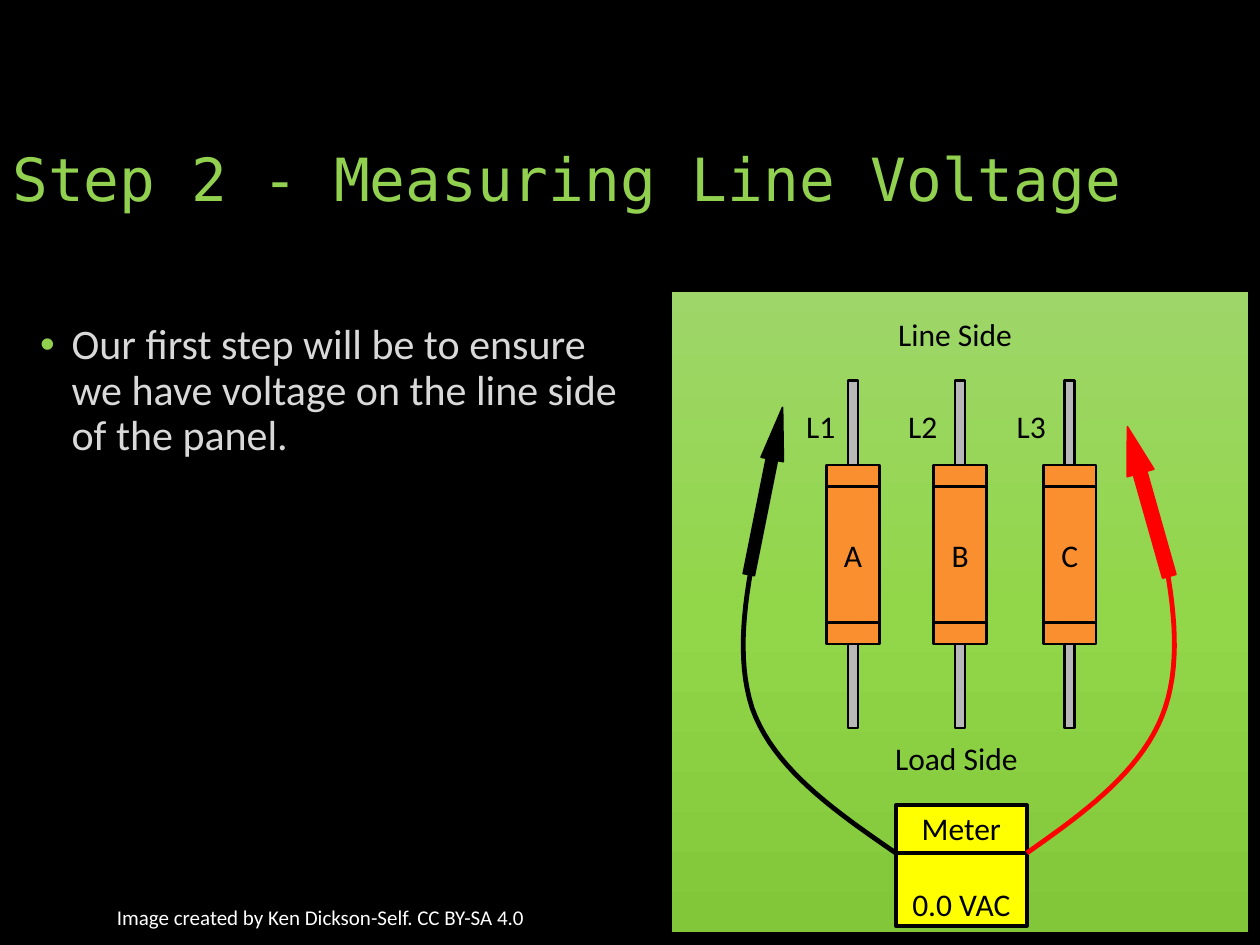
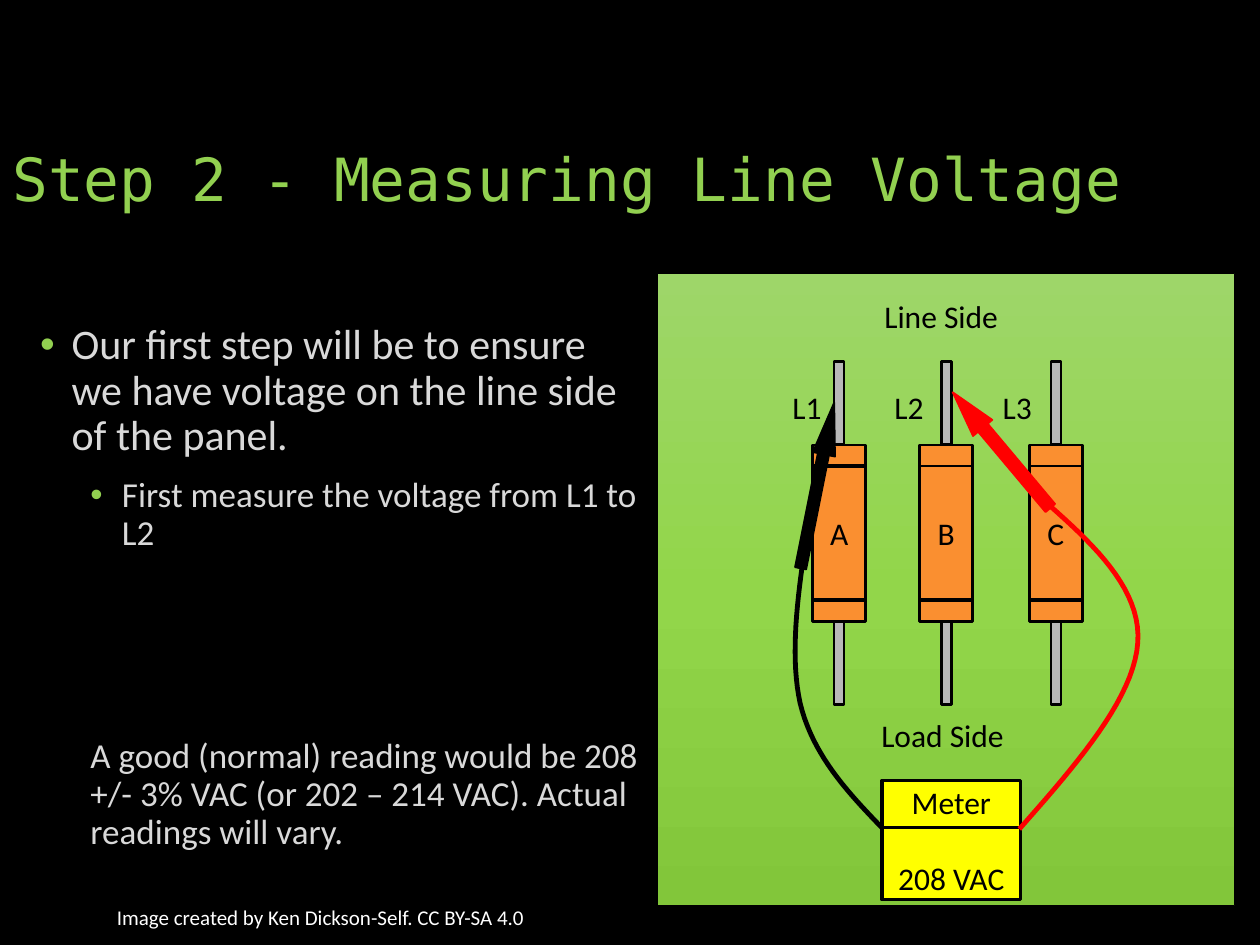
import pptx
import pptx.util
import pptx.dml.color
import pptx.enum.shapes
import pptx.enum.text
import pptx.oxml.ns
import copy
from lxml import etree

Inches, Pt = pptx.util.Inches, pptx.util.Pt
ALIGN, ANCHOR = pptx.enum.text.PP_ALIGN, pptx.enum.text.MSO_ANCHOR
SHAPE = pptx.enum.shapes.MSO_SHAPE
qn = pptx.oxml.ns.qn

BLACK, WHITE, RED = "000000", "FFFFFF", "FF0000"
GREEN, BODY_GREY = "92D050", "D9D9D9"
FUSE_ORANGE, BLADE_GREY, METER_YELLOW = "FA8F30", "B8B8B8", "FFFF00"
PANEL_GREENS = ("9ED669", "92D64A", "82C63A")
BODY_FONT, TITLE_FONT = "Calibri", "DejaVu Sans Mono"


def rgb(value):
    return pptx.dml.color.RGBColor.from_string(value)


class Deck:
    """Holds the style and the current slide."""

    def __init__(self):
        self.prs = pptx.Presentation()
        self.prs.slide_width, self.prs.slide_height = Inches(10), Inches(7.5)

    def new_slide(self):
        self.slide = self.prs.slides.add_slide(self.prs.slide_layouts[6])
        background = self.slide.background.fill
        background.solid()
        background.fore_color.rgb = rgb(BLACK)

    def styled_run(self, paragraph, text, size=18, color=BLACK, font=BODY_FONT,
                   align=ALIGN.LEFT):
        paragraph.alignment = align
        run = paragraph.add_run()
        run.text = text
        run.font.size, run.font.name = Pt(size), font
        run.font.color.rgb = rgb(color)

    def text_area(self, left, top, width, height, anchor=ANCHOR.TOP):
        box = self.slide.shapes.add_textbox(Inches(left), Inches(top), Inches(width), Inches(height))
        box.text_frame.word_wrap = True
        box.text_frame.vertical_anchor = anchor
        return box.text_frame

    def label(self, left, top, width, height, text, **style):
        self.styled_run(self.text_area(left, top, width, height).paragraphs[0], text, **style)

    def title(self, text):
        heading = self.text_area(0, 0.5, 10.66, 1.25, ANCHOR.BOTTOM).paragraphs[0]
        heading.line_spacing = 0.9
        self.styled_run(heading, text, 34, GREEN, TITLE_FONT)

    def body(self, items):
        """Each item: text, size, left margin, space before, bulleted."""
        text_frame = self.text_area(0.22, 2.52, 4.96, 4.67)
        for number, (text, size, margin, before, bulleted) in enumerate(items):
            paragraph = text_frame.add_paragraph() if number else text_frame.paragraphs[0]
            self.styled_run(paragraph, text, size, BODY_GREY)
            paragraph.line_spacing, paragraph.space_before = 0.9, Pt(before)
            props = paragraph._p.get_or_add_pPr()
            props.set("marL", str(Inches(margin)))
            props.set("indent", str(Inches(-0.25 if bulleted else 0)))
            if bulleted:
                bullet_color = etree.SubElement(props, qn("a:buClr"))
                etree.SubElement(bullet_color, qn("a:srgbClr")).set("val", GREEN)
                etree.SubElement(props, qn("a:buFont")).set("typeface", "Arial")
                etree.SubElement(props, qn("a:buChar")).set("char", "•")

    def block(self, left, top, width, height, fill, line=BLACK, weight=1.5,
              kind=SHAPE.RECTANGLE, turn=0, lines=(), gap=0):
        shape = self.slide.shapes.add_shape(
            kind, Inches(left), Inches(top), Inches(width), Inches(height))
        shape.shadow.inherit = False
        shape.rotation = turn
        shape.fill.solid()
        shape.fill.fore_color.rgb = rgb(fill)
        shape.line.color.rgb, shape.line.width = rgb(line), Pt(weight)
        text_frame = shape.text_frame
        text_frame.vertical_anchor = ANCHOR.MIDDLE
        for number, text in enumerate(lines):
            paragraph = text_frame.add_paragraph() if number else text_frame.paragraphs[0]
            self.styled_run(paragraph, text, align=ALIGN.CENTER)
            if number:
                paragraph.space_before = Pt(gap)
        return shape

    def gradient_panel(self, left, top, width, height, colors):
        panel = self.block(left, top, width, height, colors[0], weight=0.5)
        panel.fill.gradient()
        panel.fill.gradient_angle = 270
        first = panel._element.spPr.find(".//" + qn("a:gs"))
        first.addnext(copy.deepcopy(first))
        for stop, color, position in zip(panel.fill.gradient_stops, colors, (0, 0.5, 1)):
            stop.color.rgb, stop.position = rgb(color), position

    def rule(self, left, y, width, weight=2):
        line = self.slide.shapes.add_connector(
            pptx.enum.shapes.MSO_CONNECTOR.STRAIGHT,
            Inches(left), Inches(y), Inches(left + width), Inches(y))
        line.line.color.rgb, line.line.width = rgb(BLACK), Pt(weight)
        etree.SubElement(line._element.spPr, qn("a:effectLst"))

    def wire(self, points, color, steps=20):
        """Smooth curve through two joined cubic Bezier segments."""
        curve = []
        for start in (0, 3):
            a, b, c, d = points[start:start + 4]
            for step in range(steps + 1):
                t = step / steps
                u = 1 - t
                curve.append(tuple(
                    Inches(u**3 * p + 3 * u * u * t * q + 3 * u * t * t * r + t**3 * s)
                    for p, q, r, s in zip(a, b, c, d)))
        builder = self.slide.shapes.build_freeform(*curve[0], scale=1.0)
        builder.add_line_segments(curve[1:], close=False)
        shape = builder.convert_to_shape()
        shape.shadow.inherit = False
        shape.fill.background()
        shape.line.color.rgb, shape.line.width = rgb(color), Pt(2.75)

    def probe(self, tip, handle, turn, color):
        self.block(*tip, color, color, 1, SHAPE.ISOSCELES_TRIANGLE, turn)
        self.block(*handle, color, color, 1, turn=turn)

    def fuse_panel(self, left, top, width, height, meter_width, reading):
        stretch = height / 5.09

        def down(offset):
            return top + offset * stretch

        self.gradient_panel(left, top, width, height, PANEL_GREENS)
        for text, x, y in (("Line Side", 1.39, 0.14), ("Load Side", 1.4, 3.51)):
            self.label(left + x, down(y), 1.72, 0.4, text, align=ALIGN.CENTER)

        # Fuses, each with a blade above and below
        fuses = (("A", "L1", 1.23, 0.97, 2), ("B", "L2", 2.08, 1.78, 1.5),
                 ("C", "L3", 2.95, 2.64, 1.5))
        for phase, line_name, fuse_x, name_x, cap_weight in fuses:
            fuse_left = left + fuse_x
            for blade_y in (0.71, 2.8):
                self.block(fuse_left + 0.17, down(blade_y), 0.08, 0.67 * stretch, BLADE_GREY)
            self.block(fuse_left, down(1.38), 0.42, 1.42 * stretch, FUSE_ORANGE, lines=[phase])
            self.rule(fuse_left, down(1.55), 0.42, cap_weight)
            self.rule(fuse_left, down(2.63), 0.42)
            self.label(left + name_x, down(0.87), 0.47, 0.4, line_name)

        # Meter, with one line's height between its name and the reading
        self.block(left + 1.78, down(4.08), meter_width, 0.96 * stretch, METER_YELLOW,
                   weight=2, lines=["Meter", reading], gap=22)
        self.rule(left + 1.78, down(4.46), meter_width)

    def credit(self):
        self.label(0.83, 7.13, 4, 0.3, "Image created by Ken Dickson-Self. CC BY-SA 4.0",
                   size=12, color=WHITE)


FIRST_STEP = ("Our first step will be to ensure we have voltage on the line side of the panel.",
              24, 0.25, 18, True)
L1_TO_L2 = ("First measure the voltage from L1 to L2", 20, 0.65, 10, True)
GOOD_READING = ("A good (normal) reading would be 208 +/- 3% VAC (or 202 – 214 VAC). "
                "Actual readings will vary.", 20, 0.4, 106, False)

# Each lead: colour, wire from meter to probe, probe tip, probe handle, turn
STEPS = [
    dict(
        body=[FIRST_STEP],
        panel=(5.33, 2.31, 4.58, 5.09, 1.04, "0.0 VAC"),
        leads=[
            (RED, [(8.15, 6.77), (8.62, 6.44), (9.09, 6.1), (9.25, 5.61),
                   (9.41, 5.12), (9.27, 4.49), (9.12, 3.86)],
             (8.89, 3.38, 0.22, 0.38), (9.11, 3.74, 0.11, 0.85), 344.2),
            (BLACK, [(7.11, 6.77), (6.63, 6.44), (6.14, 6.1), (5.97, 5.62),
                     (5.81, 5.13), (5.95, 4.51), (6.1, 3.88)],
             (6.08, 3.23, 0.18, 0.42), (5.99, 3.63, 0.09, 0.94), 11.3),
        ],
    ),
    dict(
        body=[FIRST_STEP, L1_TO_L2, GOOD_READING],
        panel=(5.22, 2.17, 4.58, 5.02, 1.1, "208 VAC"),
        leads=[
            (RED, [(8.09, 6.58), (8.55, 6.06), (9, 5.54), (9.03, 5.1),
                   (9.06, 4.67), (8.67, 4.31), (8.27, 3.96)],
             (7.58, 3.07, 0.2, 0.37), (8.02, 3.3, 0.1, 0.83), 320),
            (BLACK, [(7, 6.57), (6.72, 6.28), (6.45, 5.99), (6.35, 5.58),
                     (6.26, 5.17), (6.34, 4.63), (6.43, 4.09)],
             (6.49, 3.19, 0.18, 0.42), (6.4, 3.59, 0.09, 0.93), 11.3),
        ],
    ),
]


def main():
    deck = Deck()
    for step in STEPS:
        deck.new_slide()
        deck.title("Step 2 - Measuring Line Voltage")
        deck.body(step["body"])
        deck.fuse_panel(*step["panel"])
        for color, points, tip, handle, turn in step["leads"]:
            deck.wire(points, color)
            deck.probe(tip, handle, turn, color)
        deck.credit()
    deck.prs.save("out.pptx")


if __name__ == "__main__":
    main()
